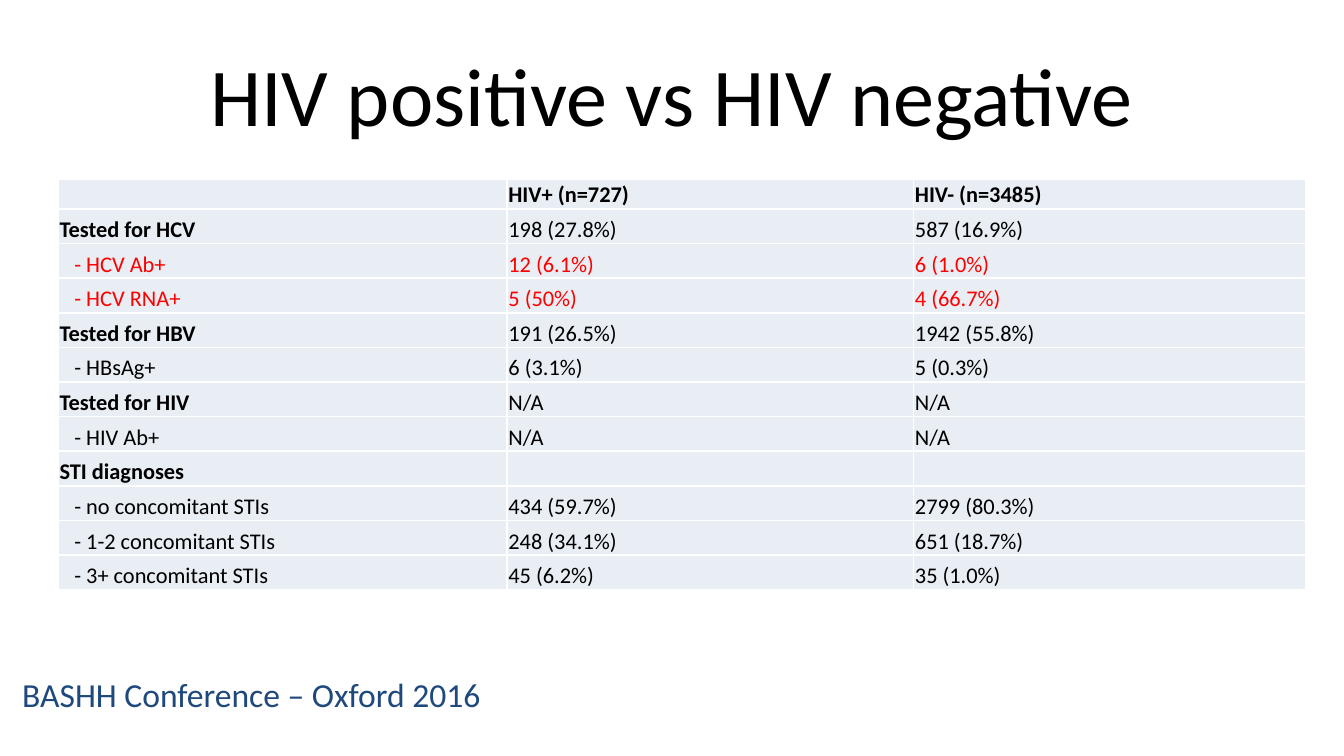
from dataclasses import dataclass
from typing import NamedTuple

from lxml.etree import SubElement
from pptx import Presentation
from pptx.dml.color import RGBColor
from pptx.enum.text import MSO_ANCHOR, PP_ALIGN
from pptx.oxml.ns import qn
from pptx.util import Inches, Length, Pt

SLIDE_WIDTH = Inches(10)
SLIDE_HEIGHT = Length(SLIDE_WIDTH * 9 // 16)


@dataclass(frozen=True)
class Theme:
    font: str = "Calibri"
    ink: str = "000000"
    alert: str = "FF0000"
    footer: str = "1F497D"
    cell: str = "E9EDF4"
    border: str = "FFFFFF"
    title_size: int = 44
    footer_size: int = 18
    table_size: int = 12
    border_width: int = 1


class Area(NamedTuple):
    """Left, top, width and height in percent of the slide."""
    left: float
    top: float
    width: float
    height: float


class Finding(NamedTuple):
    label: str
    positive: str
    negative: str
    is_group: bool = False
    is_alert: bool = False


THEME = Theme()
TITLE_AREA = Area(5, 4.05, 90, 16.7)
TABLE_AREA = Area(4.33, 23.75, 92.85, 54.2)
FOOTER_AREA = Area(0.67, 88.2, 47.8, 12.3)
COLUMN_PERCENTS = (33.4, 30.25, 29.2)
HEADER_PERCENT, ROW_PERCENT = 3.9, 4.58
INDENT = Inches(0.11)
INSET = Inches(0.01)

HEADINGS = ("", "HIV+ (n=727)", "HIV- (n=3485)")
FINDINGS = (
    Finding("Tested for HCV", "198 (27.8%)", "587 (16.9%)", is_group=True),
    Finding("- HCV Ab+", "12 (6.1%)", "6 (1.0%)", is_alert=True),
    Finding("- HCV RNA+", "5 (50%)", "4 (66.7%)", is_alert=True),
    Finding("Tested for HBV", "191 (26.5%)", "1942 (55.8%)", is_group=True),
    Finding("- HBsAg+", "6 (3.1%)", "5 (0.3%)"),
    Finding("Tested for HIV", "N/A", "N/A", is_group=True),
    Finding("- HIV Ab+", "N/A", "N/A"),
    Finding("STI diagnoses", "", "", is_group=True),
    Finding("- no concomitant STIs", "434 (59.7%)", "2799 (80.3%)"),
    Finding("- 1-2 concomitant STIs", "248 (34.1%)", "651 (18.7%)"),
    Finding("- 3+ concomitant STIs", "45 (6.2%)", "35 (1.0%)"),
)


def across(percent: float) -> Length:
    return Length(round(SLIDE_WIDTH * percent / 100))


def down(percent: float) -> Length:
    return Length(round(SLIDE_HEIGHT * percent / 100))


def place(area: Area) -> tuple[Length, Length, Length, Length]:
    return across(area.left), down(area.top), across(area.width), down(area.height)


def style(paragraph, size: int, color: str, bold: bool = False) -> None:
    font = paragraph.font
    font.name, font.size, font.bold = THEME.font, Pt(size), bold
    font.color.rgb = RGBColor.from_string(color)


def add_line_of_text(slide, area: Area, wording: str, size: int, color: str,
                     align: PP_ALIGN, anchor: MSO_ANCHOR) -> None:
    frame = slide.shapes.add_textbox(*place(area)).text_frame
    frame.word_wrap = True
    frame.vertical_anchor = anchor
    frame.text = wording
    frame.paragraphs[0].alignment = align
    style(frame.paragraphs[0], size, color)


def add_borders(cell) -> None:
    properties = cell._tc.get_or_add_tcPr()
    for side in ("a:lnL", "a:lnR", "a:lnT", "a:lnB"):
        line = SubElement(properties, qn(side), w=str(Pt(THEME.border_width)))
        SubElement(SubElement(line, qn("a:solidFill")), qn("a:srgbClr"), val=THEME.border)


def fill_cell(cell, wording: str, color: str, bold: bool, indent: Length) -> None:
    add_borders(cell)
    cell.fill.solid()
    cell.fill.fore_color.rgb = RGBColor.from_string(THEME.cell)
    cell.vertical_anchor = MSO_ANCHOR.BOTTOM
    cell.margin_left = INSET + indent
    cell.margin_right = cell.margin_top = INSET
    cell.margin_bottom = 0
    paragraph = cell.text_frame.paragraphs[0]
    if wording:
        paragraph.text = wording
        style(paragraph, THEME.table_size, color, bold)
    else:  # an empty cell takes its line height from the end mark
        SubElement(paragraph._p, qn("a:endParaRPr"), sz=str(THEME.table_size * 100))


def add_findings(slide) -> None:
    table = slide.shapes.add_table(
        len(FINDINGS) + 1, len(HEADINGS), *place(TABLE_AREA)).table
    table.first_row = table.horz_banding = False
    for column, percent in zip(table.columns, COLUMN_PERCENTS):
        column.width = across(percent)
    for index, row in enumerate(table.rows):
        row.height = down(ROW_PERCENT if index else HEADER_PERCENT)

    for column, heading in enumerate(HEADINGS):
        fill_cell(table.cell(0, column), heading, THEME.ink, True, Length(0))
    for row, finding in enumerate(FINDINGS, start=1):
        color = THEME.alert if finding.is_alert else THEME.ink
        label_indent = Length(0) if finding.is_group else INDENT
        fill_cell(table.cell(row, 0), finding.label, color, finding.is_group, label_indent)
        for column, count in enumerate((finding.positive, finding.negative), start=1):
            fill_cell(table.cell(row, column), count, color, False, Length(0))


def main() -> None:
    presentation = Presentation()
    presentation.slide_width, presentation.slide_height = SLIDE_WIDTH, SLIDE_HEIGHT
    slide = presentation.slides.add_slide(presentation.slide_layouts[6])
    add_line_of_text(slide, FOOTER_AREA, "BASHH Conference – Oxford 2016",
                     THEME.footer_size, THEME.footer, PP_ALIGN.LEFT, MSO_ANCHOR.TOP)
    add_findings(slide)
    add_line_of_text(slide, TITLE_AREA, "HIV positive vs HIV negative",
                     THEME.title_size, THEME.ink, PP_ALIGN.CENTER, MSO_ANCHOR.MIDDLE)
    presentation.save("out.pptx")


if __name__ == "__main__":
    main()
